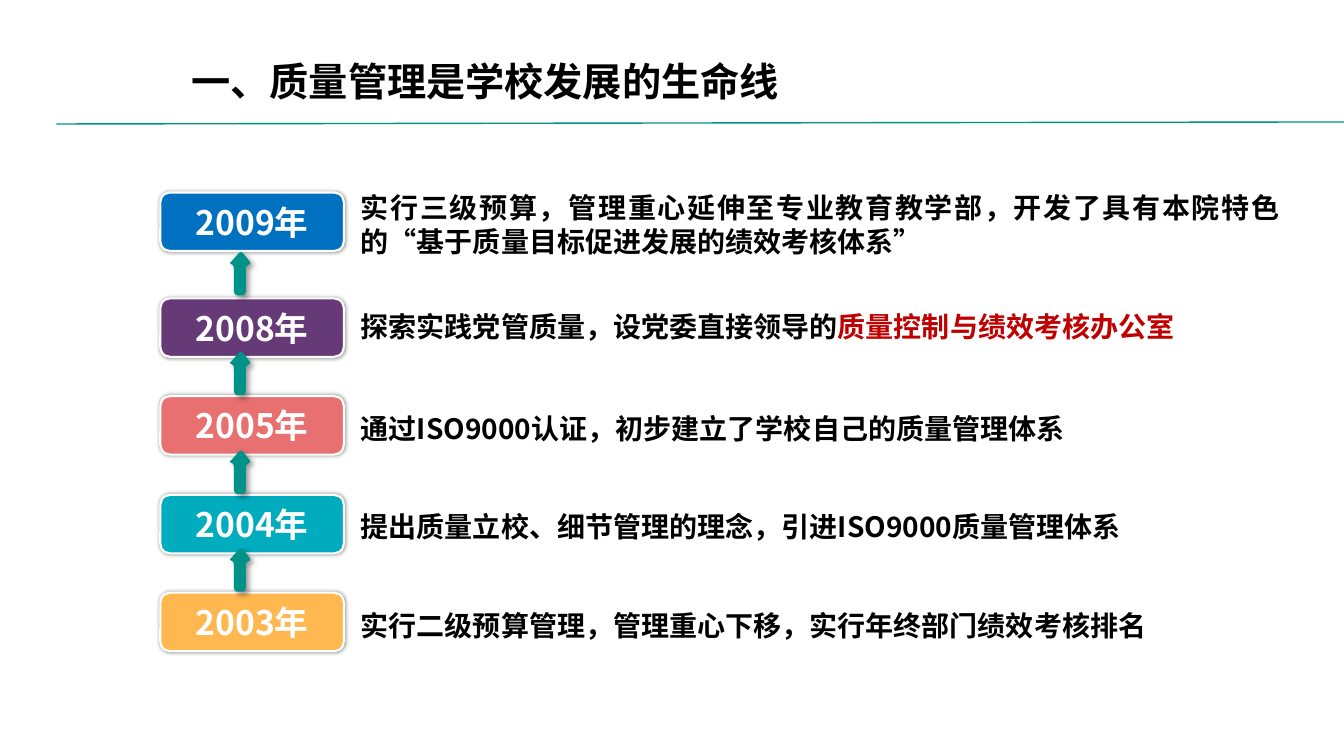
import pptx
import pptx.dml.color
import pptx.enum.shapes
import pptx.enum.text
import pptx.oxml
import pptx.oxml.ns
import pptx.util

Inches, Pt = pptx.util.Inches, pptx.util.Pt
RGBColor = pptx.dml.color.RGBColor
PP_ALIGN = pptx.enum.text.PP_ALIGN
ANCHOR = pptx.enum.text.MSO_ANCHOR
SHAPE = pptx.enum.shapes.MSO_SHAPE

WHITE = RGBColor(0xFF, 0xFF, 0xFF)
BLACK = RGBColor(0, 0, 0)
RED = RGBColor(0xC0, 0, 0)
TEAL = RGBColor(0, 0x92, 0x87)
ORANGE = RGBColor(0xFF, 0xB8, 0x50)
CYAN = RGBColor(0x01, 0xAC, 0xBE)
CORAL = RGBColor(0xE8, 0x70, 0x71)
PURPLE = RGBColor(0x66, 0x3A, 0x77)
BLUE = RGBColor(0, 0x70, 0xC0)
CJK, LATIN = "Noto Sans CJK SC", "Arial"

# Year, colour, box top, text top, text height, line spacing, runs of (text, font, colour)
MILESTONES = [
    ("2003年", ORANGE, 5.88, 5.82, 0.61, 1.5,
     [("实行二级预算管理，管理重心下移，实行年终部门绩效考核排名", LATIN, BLACK)]),
    ("2004年", CYAN, 4.91, 4.84, 0.6, 1.5,
     [("提出质量立校、细节管理的理念，引进ISO9000质量管理体系", CJK, BLACK)]),
    ("2005年", CORAL, 3.93, 3.87, 0.61, 1.5,
     [("通过ISO9000认证，初步建立了学校自己的质量管理体系", CJK, BLACK)]),
    ("2008年", PURPLE, 2.96, 3.02, 0.44, 1,
     [("探索实践党管质量，设党委直接领导的", LATIN, BLACK),
      ("质量控制与绩效考核办公室", LATIN, RED)]),
    ("2009年", BLUE, 1.91, 1.84, 0.79, 1,
     [("实行三级预算，管理重心延伸至专业教育教学部，开发了具有本院特色的", LATIN, BLACK),
      ("“", CJK, BLACK),
      ("基于质量目标促进发展的绩效考核体系", LATIN, BLACK),
      ("”", CJK, BLACK)]),
]
ARROW_TIPS = [5.44, 4.47, 3.49, 2.5]

# Arrow outline in hundredths of an inch from its top left corner
ARROW = [(0, 11), (2, 9), (9, 1), (11, 0), (13, 1), (20, 10), (20, 12), (18, 13),
         (16, 15), (16, 39), (15, 42), (13, 43), (7, 43), (5, 42), (4, 39),
         (4, 15), (3, 13), (1, 12)]


def add_run(p, text, size=20, font=CJK, color=BLACK):
    r = p.add_run()
    r.text = text
    r.font.size, r.font.name, r.font.bold = Pt(size), font, True
    r.font.color.rgb = color
    ea = pptx.oxml.parse_xml(f'<a:ea {pptx.oxml.ns.nsdecls("a")} typeface="{CJK}"/>')
    r.font._element.find(pptx.oxml.ns.qn("a:latin")).addnext(ea)


class Deck:
    def __init__(self):
        self.prs = pptx.Presentation()
        self.prs.slide_width, self.prs.slide_height = Inches(13.33), Inches(7.5)
        self.s = self.prs.slides.add_slide(self.prs.slide_layouts[6])

    def effects(self, sp, shadow=""):
        ns = pptx.oxml.ns.nsdecls("a")
        sp._element.spPr.append(
            pptx.oxml.parse_xml(f"<a:effectLst {ns}>{shadow}</a:effectLst>"))

    def shadow(self, sp, blur, dist, alpha):
        self.effects(sp, f'<a:outerShdw blurRad="{Pt(blur)}" dist="{Pt(dist)}" '
                         'dir="2700000" algn="tl" rotWithShape="0"><a:srgbClr val="000000">'
                         f'<a:alpha val="{alpha * 1000}"/></a:srgbClr></a:outerShdw>')

    def text(self, runs, x, y, w, h, size=20, align=PP_ALIGN.LEFT, spacing=1,
             anchor=ANCHOR.TOP):
        sp = self.s.shapes.add_textbox(Inches(x), Inches(y), Inches(w), Inches(h))
        tf = sp.text_frame
        tf.word_wrap, tf.vertical_anchor = True, anchor
        p = tf.paragraphs[0]
        p.alignment, p.line_spacing = align, float(spacing)
        for text, font, color in runs:
            add_run(p, text, size=size, font=font, color=color)

    def year_box(self, year, color, y):
        sp = self.s.shapes.add_shape(SHAPE.ROUNDED_RECTANGLE, Inches(1.59), Inches(y),
                                     Inches(1.82), Inches(0.58))
        sp.fill.solid()
        sp.fill.fore_color.rgb = color
        sp.line.color.rgb, sp.line.width = WHITE, Pt(1.5)
        self.shadow(sp, blur=3, dist=0, alpha=40)
        tf = sp.text_frame
        tf.margin_top = tf.margin_bottom = 0
        tf.vertical_anchor = ANCHOR.MIDDLE
        p = tf.paragraphs[0]
        p.alignment = PP_ALIGN.CENTER
        add_run(p, year, size=24, color=WHITE)

    def arrow(self, x, y):
        points = [(x * 100 + dx, y * 100 + dy) for dx, dy in ARROW]
        fb = self.s.shapes.build_freeform(*points[0], scale=Inches(0.01))
        fb.add_line_segments(points[1:], close=True)
        sp = fb.convert_to_shape()
        sp.fill.solid()
        sp.fill.fore_color.rgb = TEAL
        sp.line.fill.background()
        self.shadow(sp, blur=4, dist=3, alpha=40)

    def line(self, x1, y1, x2, y2):
        sp = self.s.shapes.add_connector(
            pptx.enum.shapes.MSO_CONNECTOR.STRAIGHT,
            Inches(x1), Inches(y1), Inches(x2), Inches(y2))
        sp.line.color.rgb, sp.line.width = TEAL, Pt(1)
        self.effects(sp)


def main():
    deck = Deck()

    # Milestones, from the earliest at the bottom
    for year, color, top, text_top, height, spacing, runs in MILESTONES:
        deck.year_box(year, color, top)
        deck.text(runs, 3.48, text_top, 9.31, height, align=PP_ALIGN.JUSTIFY,
                  spacing=spacing)

    # Arrows between the years
    for tip in ARROW_TIPS:
        deck.arrow(2.28, tip)

    # Title and rule
    deck.text([("一、质量管理是学校发展的生命线", CJK, BLACK)], 1.8, 0.3, 8.62, 1.01,
              size=28, anchor=ANCHOR.MIDDLE)
    deck.line(0.56, 1.23, 13.33, 1.21)

    deck.prs.save("out.pptx")


if __name__ == "__main__":
    main()
